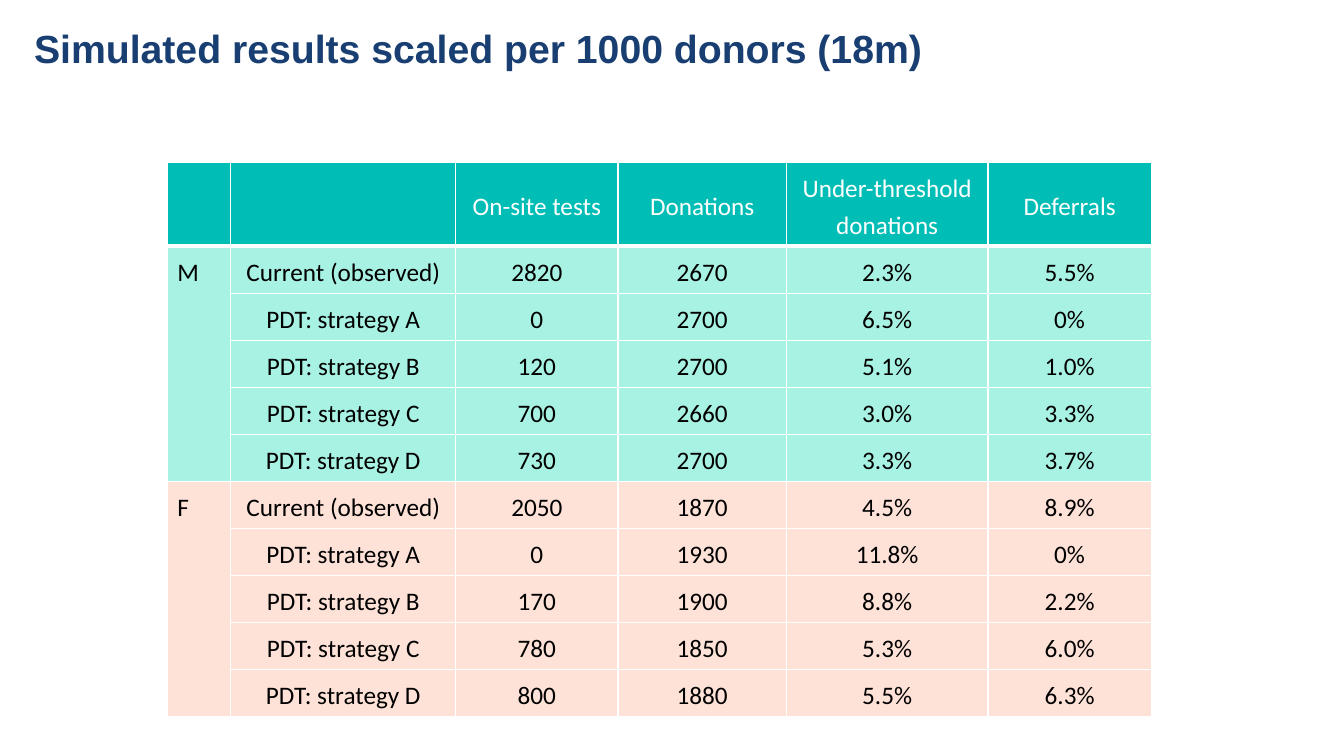
import pptx
import pptx.dml.color
import pptx.enum.text
import pptx.util
from lxml import etree
from pptx.oxml.ns import qn

Inches, Pt = pptx.util.Inches, pptx.util.Pt
RGB = pptx.dml.color.RGBColor.from_string
ALIGN = pptx.enum.text.PP_ALIGN
ANCHOR = pptx.enum.text.MSO_ANCHOR

COLORS = {
    "title": "183E72",
    "header": "00BDB6",
    "men": "A8F2E3",
    "women": "FEC3AC",
    "text": "000000",
    "white": "FFFFFF",
}
COLUMN_WIDTHS = [0.63, 2.23, 1.61, 1.67, 2, 1.62]
ROW_HEIGHT = 0.41
HEADINGS = ["", "", "On-site tests", "Donations", "Under-threshold donations", "Deferrals"]
STRATEGIES = ["Current (observed)"] + [f"PDT: strategy {letter}" for letter in "ABCD"]

# Sex, fill colour, fill opacity in percent, one row of results per strategy
GROUPS = [
    ("M", "men", 100, [
        ("2820", "2670", "2.3%", "5.5%"),
        ("0", "2700", "6.5%", "0%"),
        ("120", "2700", "5.1%", "1.0%"),
        ("700", "2660", "3.0%", "3.3%"),
        ("730", "2700", "3.3%", "3.7%"),
    ]),
    ("F", "women", 47, [
        ("2050", "1870", "4.5%", "8.9%"),
        ("0", "1930", "11.8%", "0%"),
        ("170", "1900", "8.8%", "2.2%"),
        ("780", "1850", "5.3%", "6.0%"),
        ("800", "1880", "5.5%", "6.3%"),
    ]),
]


def add_title(slide, left, top, width, height):
    title = slide.shapes.add_textbox(*map(Inches, (left, top, width, height))).text_frame
    title.word_wrap = True
    title.vertical_anchor = ANCHOR.MIDDLE
    heading = title.paragraphs[0]
    heading.text = "Simulated results scaled per 1000 donors (18m)"
    heading.line_spacing = 0.9
    heading.font.name = "Arial"
    heading.font.size = Pt(28)
    heading.font.bold = True
    heading.font.color.rgb = RGB(COLORS["title"])


def set_borders(cell, bottom=1):
    properties = cell._tc.get_or_add_tcPr()
    for side, points in (("L", 1), ("R", 1), ("T", 1), ("B", bottom)):
        border = etree.SubElement(properties, qn(f"a:ln{side}"), w=str(Pt(points)))
        solid = etree.SubElement(border, qn("a:solidFill"))
        etree.SubElement(solid, qn("a:srgbClr"), val=COLORS["white"])


def fill_cell(cell, text, fill, opacity=100, color="text", centered=True, bottom=1):
    set_borders(cell, bottom)
    cell.fill.solid()
    cell.fill.fore_color.rgb = RGB(COLORS[fill])
    if opacity < 100:
        tint = cell._tc.tcPr.find(qn("a:solidFill"))[0]
        etree.SubElement(tint, qn("a:alpha"), val=str(opacity * 1000))
    cell.vertical_anchor = ANCHOR.MIDDLE if centered else ANCHOR.TOP
    entry = cell.text_frame.paragraphs[0]
    entry.text = text
    entry.alignment = ALIGN.CENTER if centered else ALIGN.LEFT
    entry.line_spacing = 1.2
    entry.space_after = Pt(8)
    entry.font.name = "Calibri"
    entry.font.size = Pt(18)
    entry.font.color.rgb = RGB(COLORS[color])


def add_results(slide, left, top, width, height):
    row_count = 1 + len(GROUPS) * len(STRATEGIES)
    results = slide.shapes.add_table(
        row_count, len(HEADINGS), *map(Inches, (left, top, width, height))).table
    results.first_row = results.horz_banding = False
    for column, share in zip(results.columns, COLUMN_WIDTHS):
        column.width = Inches(width * share / sum(COLUMN_WIDTHS))
    for row in results.rows:
        row.height = Inches(ROW_HEIGHT)

    # Header row
    for column, heading in enumerate(HEADINGS):
        fill_cell(results.cell(0, column), heading, "header", color="white", bottom=3)

    # One block of strategies for each sex
    for index, (sex, fill, opacity, outcomes) in enumerate(GROUPS):
        first = 1 + index * len(STRATEGIES)
        for offset, (strategy, values) in enumerate(zip(STRATEGIES, outcomes)):
            label = "" if offset else sex
            for column, text in enumerate((label, strategy, *values)):
                fill_cell(results.cell(first + offset, column), text, fill, opacity,
                          centered=column > 0)
        results.cell(first, 0).merge(results.cell(first + len(STRATEGIES) - 1, 0))


def main():
    deck = pptx.Presentation()
    deck.slide_width, deck.slide_height = Inches(13.33), Inches(7.5)
    slide = deck.slides.add_slide(deck.slide_layouts[6])
    add_results(slide, 1.66, 1.61, 9.76, 5.16)
    add_title(slide, 0.24, 0.18, 9.27, 0.64)
    deck.save("out.pptx")


if __name__ == "__main__":
    main()
